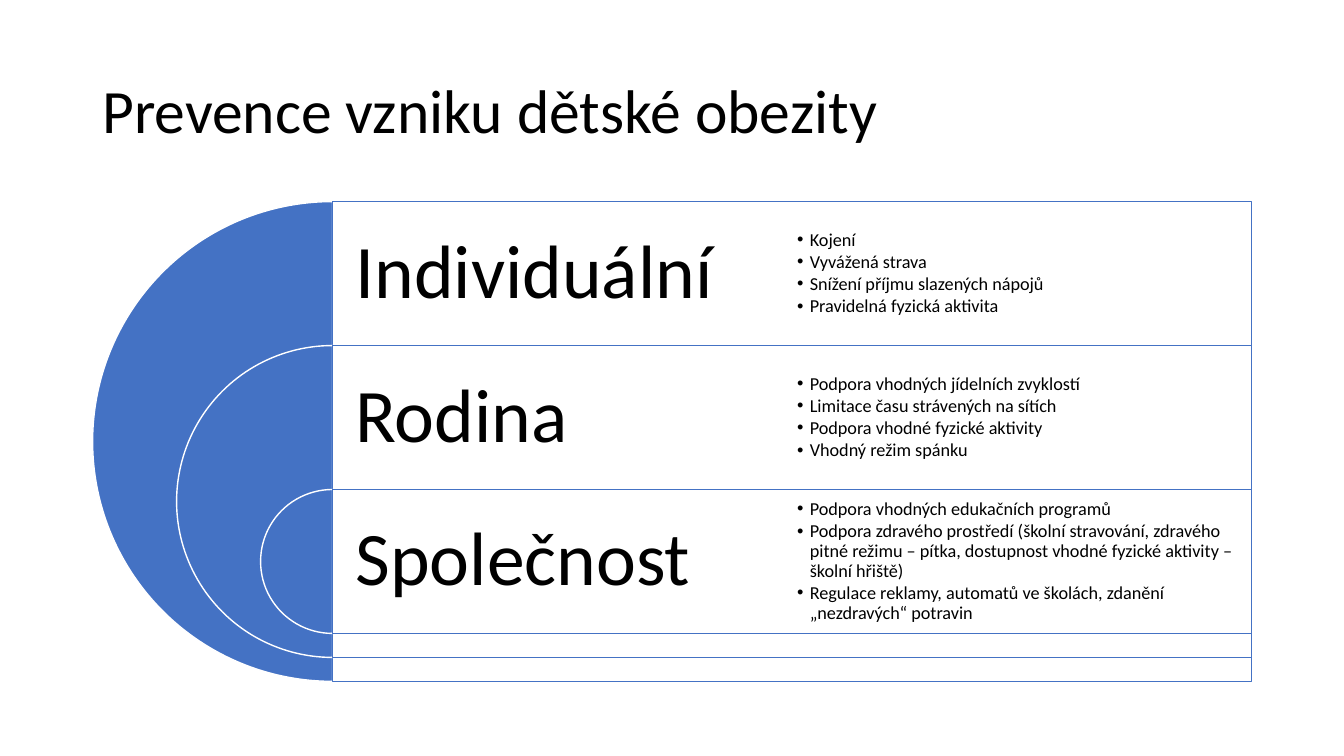
from lxml.etree import SubElement
from pptx import Presentation
from pptx.dml.color import RGBColor
from pptx.enum.shapes import MSO_SHAPE
from pptx.enum.text import MSO_ANCHOR
from pptx.oxml.ns import qn
from pptx.util import Cm, Pt

BLUE = RGBColor(0x44, 0x72, 0xC4)
WHITE = RGBColor(0xFF, 0xFF, 0xFF)
BLACK = RGBColor(0x00, 0x00, 0x00)

LEVELS = [
    ("Individuální", [
        "Kojení",
        "Vyvážená strava",
        "Snížení příjmu slazených nápojů",
        "Pravidelná fyzická aktivita",
    ]),
    ("Rodina", [
        "Podpora vhodných jídelních zvyklostí",
        "Limitace času strávených na sítích",
        "Podpora vhodné fyzické aktivity",
        "Vhodný režim spánku",
    ]),
    ("Společnost", [
        "Podpora vhodných edukačních programů",
        "Podpora zdravého prostředí (školní stravování, zdravého pitné režimu – pítka, "
        "dostupnost vhodné fyzické aktivity – školní hřiště)",
        "Regulace reklamy, automatů ve školách, zdanění „nezdravých“ potravin",
    ]),
]

AXIS, TOP, DIAMETER = 8.38, 5.08, 12.09
BAND = 0.3 * DIAMETER
SHRINK = 0.35 * DIAMETER
COLUMN = 11.58

prs = Presentation()
prs.slide_width, prs.slide_height = Cm(33.87), Cm(19.05)
slide = prs.slides.add_slide(prs.slide_layouts[6])


def add_text(left, top, width, height, lines, size, inset_x, inset_y):
    frame = slide.shapes.add_textbox(Cm(left), Cm(top), Cm(width), Cm(height)).text_frame
    frame.word_wrap = True
    frame.vertical_anchor = MSO_ANCHOR.MIDDLE
    frame.margin_left = frame.margin_right = Cm(inset_x)
    frame.margin_top = frame.margin_bottom = Cm(inset_y)
    frame.text = "\n".join(lines)
    for paragraph in frame.paragraphs:
        paragraph.line_spacing = 0.9
        for run in paragraph.runs:
            run.font.name = "Calibri"
            run.font.size = Pt(size)
            run.font.color.rgb = BLACK
    return frame


def add_outlined(preset, left, top, width, height, fill, line):
    shape = slide.shapes.add_shape(preset, Cm(left), Cm(top), Cm(width), Cm(height))
    shape.shadow.inherit = False
    shape.fill.solid()
    shape.fill.fore_color.rgb = fill
    shape.line.color.rgb = line
    shape.line.width = Pt(1)
    return shape


add_text(2.33, 1.01, 29.21, 3.68, ["Prevence vzniku dětské obezity"], 44, 0.25, 0.13)

for index, (level, measures) in enumerate(LEVELS):
    diameter = DIAMETER - index * SHRINK
    top = TOP + index * BAND

    half_circle = add_outlined(MSO_SHAPE.PIE, AXIS - diameter / 2, top,
                               diameter, diameter, BLUE, WHITE)
    half_circle.adjustments[0] = 54
    half_circle.adjustments[1] = 162

    panel = add_outlined(MSO_SHAPE.RECTANGLE, AXIS, top, 2 * COLUMN, diameter, WHITE, BLUE)
    panel_color = panel.fill._xPr.find(qn("a:solidFill"))[0]
    SubElement(panel_color, qn("a:alpha"), val="90000")

    add_text(AXIS, top, COLUMN, BAND, [level], 54, 0.58, 0.58)

    measure_list = add_text(AXIS + COLUMN, top, COLUMN, BAND, measures, 13, 0.13, 0.13)
    for paragraph in measure_list.paragraphs:
        paragraph.level = 1
        paragraph.space_after = Pt(1.8)
        properties = paragraph._p.get_or_add_pPr()
        properties.set("marL", str(Cm(0.32)))
        properties.set("indent", str(-Cm(0.32)))
        SubElement(properties, qn("a:buFont"), typeface="Arial")
        SubElement(properties, qn("a:buChar"), char="•")

prs.save("out.pptx")
